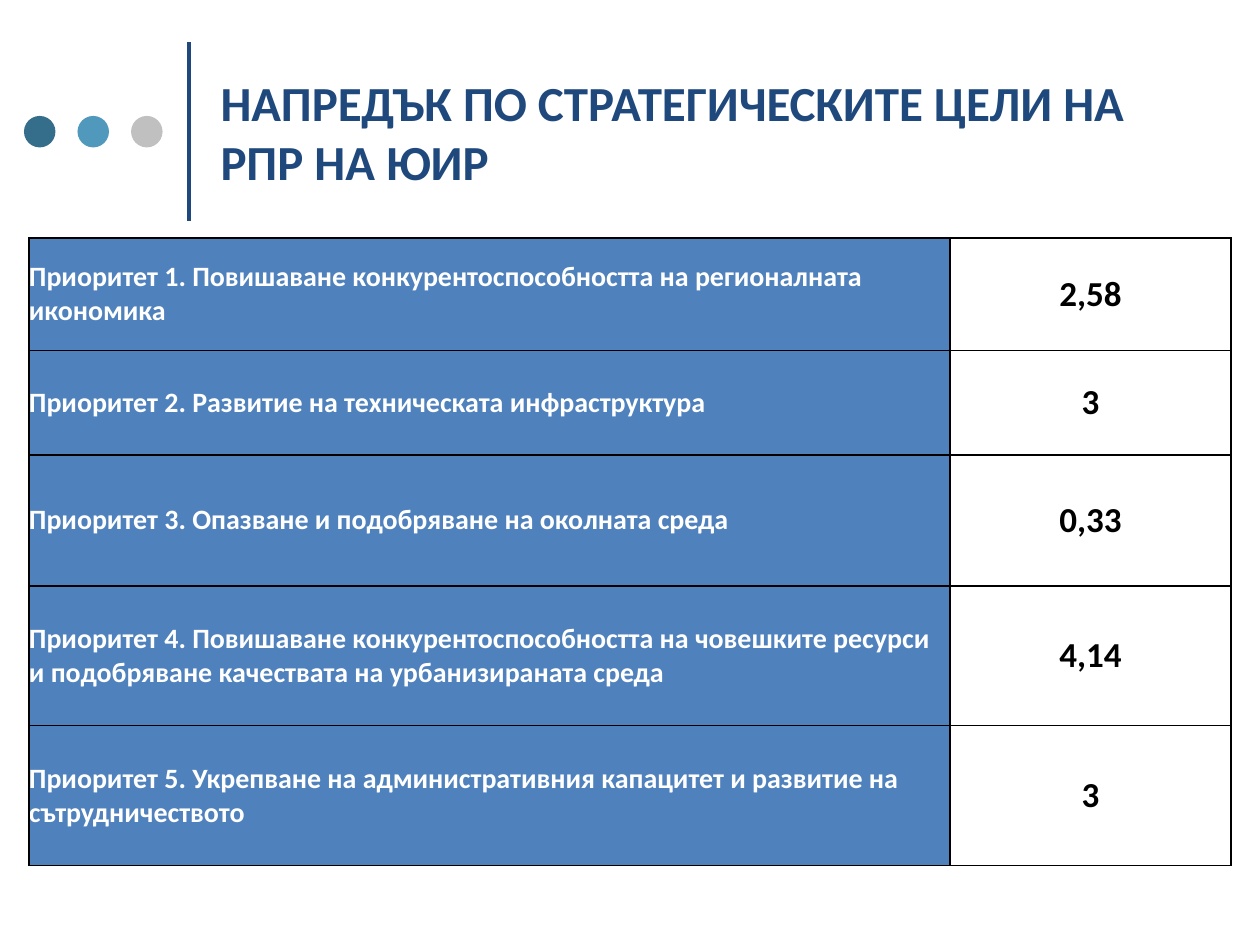
import dataclasses

import lxml.etree
import pptx
import pptx.dml.color
import pptx.enum.shapes
import pptx.enum.text
import pptx.oxml.ns
import pptx.presentation
import pptx.slide
import pptx.table
import pptx.text.text
import pptx.util

Inches = pptx.util.Inches
Align = pptx.enum.text.PP_ALIGN
Middle = pptx.enum.text.MSO_ANCHOR.MIDDLE
qn = pptx.oxml.ns.qn


@dataclasses.dataclass(frozen=True)
class Theme:
    font: str = "Calibri"
    navy: str = "1F497D"
    blue: str = "4F81BD"
    white: str = "FFFFFF"
    black: str = "000000"
    dots: tuple[str, ...] = ("356E8B", "5098BC", "C0C0C0")
    title: int = 28
    label: int = 16
    value: int = 20
    rule: int = 2
    edge: int = 1


@dataclasses.dataclass(frozen=True)
class Goal:
    name: str
    score: str
    height: float


THEME = Theme()
GOALS = [
    Goal("Приоритет 1. Повишаване конкурентоспособността на регионалната икономика", "2,58", 0.89),
    Goal("Приоритет 2. Развитие на техническата инфраструктура", "3", 0.83),
    Goal("Приоритет 3. Опазване и подобряване на околната среда", "0,33", 1.04),
    Goal("Приоритет 4. Повишаване конкурентоспособността на човешките ресурси "
         "и подобряване качествата на урбанизираната среда", "4,14", 1.11),
    Goal("Приоритет 5. Укрепване на административния капацитет и развитие на "
         "сътрудничеството", "3", 1.11),
]
WIDTHS = (7.31, 2.23)


def color(code: str) -> pptx.dml.color.RGBColor:
    return pptx.dml.color.RGBColor.from_string(code)


def write(frame: pptx.text.text.TextFrame, text: str, size: int, code: str, align: Align) -> None:
    frame.text = text
    para = frame.paragraphs[0]
    para.alignment = align
    font = para.runs[0].font
    font.name = THEME.font
    font.size = pptx.util.Pt(size)
    font.bold = True
    font.color.rgb = color(code)


def add_rule(slide: pptx.slide.Slide) -> None:
    kind = pptx.enum.shapes.MSO_CONNECTOR.STRAIGHT
    rule = slide.shapes.add_connector(kind, Inches(1.5), Inches(1.75), Inches(1.5), Inches(0.33))
    rule.line.color.rgb = color(THEME.navy)
    rule.line.width = pptx.util.Pt(THEME.rule)
    lxml.etree.SubElement(rule._element.spPr, qn("a:effectLst"))


def add_dots(slide: pptx.slide.Slide) -> None:
    kind = pptx.enum.shapes.MSO_SHAPE.OVAL
    size = Inches(0.25)
    for i, code in enumerate(THEME.dots):
        dot = slide.shapes.add_shape(kind, Inches(0.19 + 0.425 * i), Inches(0.92), size, size)
        dot.shadow.inherit = False
        dot.fill.solid()
        dot.fill.fore_color.rgb = color(code)
        dot.line.fill.background()


def add_title(slide: pptx.slide.Slide) -> None:
    title = slide.shapes.title
    title.left, title.top = Inches(1.67), Inches(0.21)
    title.width, title.height = Inches(7.67), Inches(1.67)
    frame = title.text_frame
    write(frame, "НАПРЕДЪК ПО СТРАТЕГИЧЕСКИТЕ ЦЕЛИ НА РПР НА ЮИР",
          THEME.title, THEME.navy, Align.LEFT)
    frame.word_wrap = True
    frame.auto_size = pptx.enum.text.MSO_AUTO_SIZE.NONE
    frame.vertical_anchor = Middle
    frame.margin_left = frame.margin_right = Inches(0.08)
    frame.margin_top = frame.margin_bottom = Inches(0.08)


def add_edges(cell: pptx.table._Cell) -> None:
    props = cell._tc.get_or_add_tcPr()
    for i, side in enumerate(("a:lnL", "a:lnR", "a:lnT", "a:lnB")):
        line = lxml.etree.Element(qn(side), w=str(pptx.util.Pt(THEME.edge)))
        fill = lxml.etree.SubElement(line, qn("a:solidFill"))
        lxml.etree.SubElement(fill, qn("a:srgbClr"), val=THEME.black)
        props.insert(i, line)  # borders come before the fill


def fill_cell(cell: pptx.table._Cell, text: str, size: int, code: str, align: Align,
              back: str | None = None) -> None:
    write(cell.text_frame, text, size, code, align)
    cell.vertical_anchor = Middle
    cell.margin_left = cell.margin_right = cell.margin_top = cell.margin_bottom = 0
    if back:
        cell.fill.solid()
        cell.fill.fore_color.rgb = color(back)
    else:
        cell.fill.background()
    add_edges(cell)


def add_goals(slide: pptx.slide.Slide) -> None:
    height = sum(goal.height for goal in GOALS)
    table = slide.shapes.add_table(len(GOALS), len(WIDTHS), Inches(0.23), Inches(1.89),
                                   Inches(sum(WIDTHS)), Inches(height)).table
    table.first_row = table.horz_banding = False
    for col, width in zip(table.columns, WIDTHS):
        col.width = Inches(width)
    for i, goal in enumerate(GOALS):
        table.rows[i].height = Inches(goal.height)
        fill_cell(table.cell(i, 0), goal.name, THEME.label, THEME.white, Align.LEFT, THEME.blue)
        fill_cell(table.cell(i, 1), goal.score, THEME.value, THEME.black, Align.CENTER)


def main() -> None:
    deck = pptx.Presentation()
    deck.slide_width, deck.slide_height = Inches(10), Inches(7.5)
    slide = deck.slides.add_slide(deck.slide_layouts.get_by_name("Title Only"))

    # Heading with its rule and dots
    add_rule(slide)
    add_dots(slide)
    add_title(slide)

    # Progress by priority
    add_goals(slide)
    deck.save("out.pptx")


if __name__ == "__main__":
    main()
